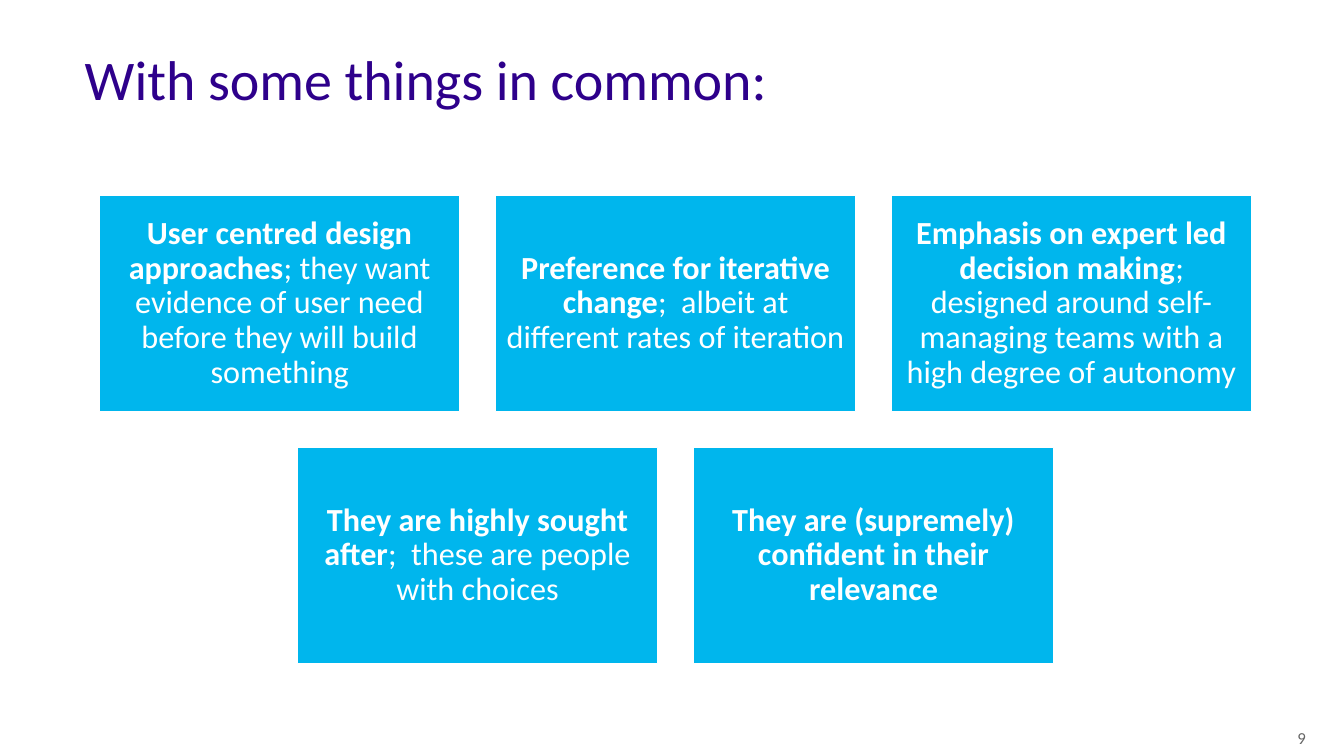
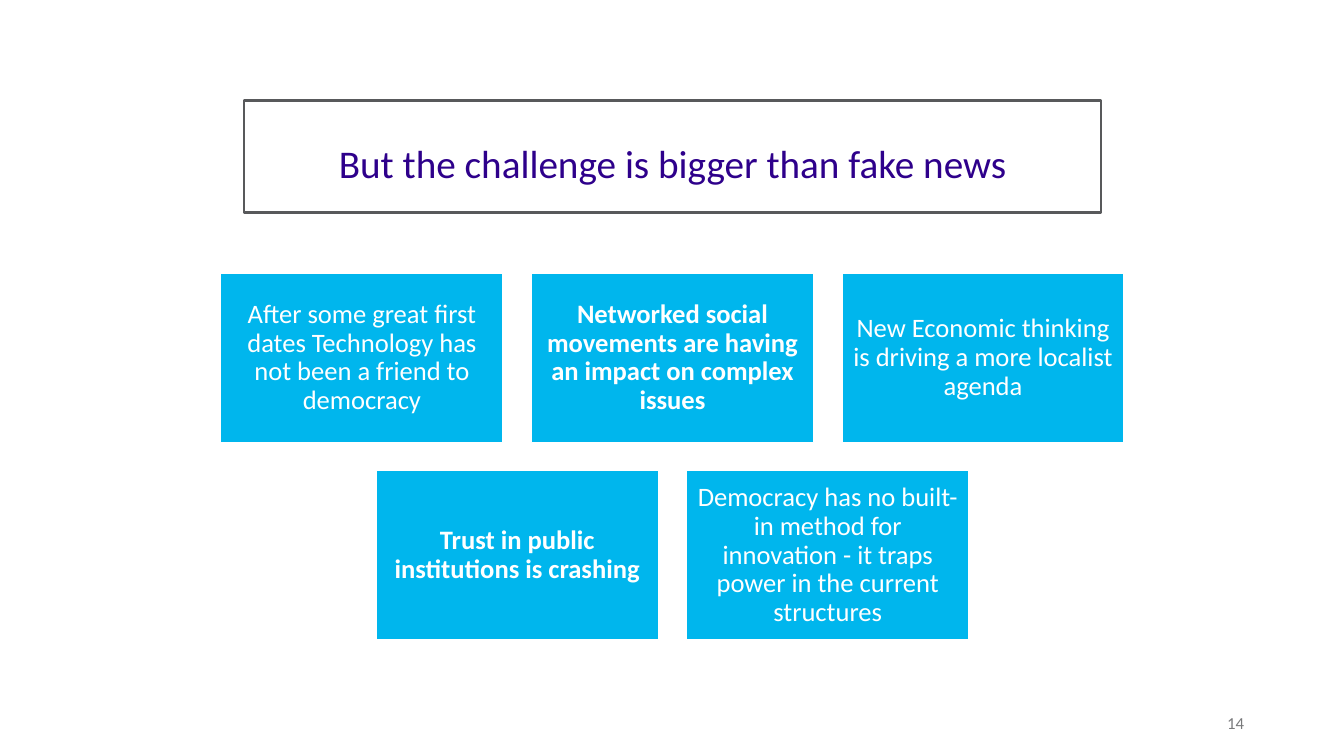
from lxml.etree import SubElement
from pptx import Presentation
from pptx.dml.color import RGBColor
from pptx.enum.shapes import MSO_SHAPE
from pptx.enum.text import MSO_ANCHOR, MSO_AUTO_SIZE, PP_ALIGN
from pptx.oxml.ns import qn
from pptx.util import Inches, Pt

WIDE, HIGH = 13.33, 7.5
FONT = "Calibri"
HUES = {
    "title": "2E008B",
    "card": "00B6ED",
    "white": "FFFFFF",
    "slate": "58595B",
    "grey": "666666",
}
LEFT, MID, RIGHT = PP_ALIGN.LEFT, PP_ALIGN.CENTER, PP_ALIGN.RIGHT
TOP, CORE, BASE = MSO_ANCHOR.TOP, MSO_ANCHOR.MIDDLE, MSO_ANCHOR.BOTTOM

# Each card is a bold part followed by a plain part.
COMMON = [
    [("User centred design approaches",
      "; they want evidence of user need before they will build something"),
     ("Preference for iterative change",
      ";  albeit at different rates of iteration"),
     ("Emphasis on expert led decision making",
      "; designed around self-managing teams with a high degree of autonomy")],
    [("They are highly sought after", ";  these are people with choices"),
     ("They are (supremely) confident in their relevance", "")],
]
ISSUES = [
    [("", "After some great first dates Technology has not been a friend to "
          "democracy"),
     ("Networked social movements are having an impact on complex issues", ""),
     ("", "New Economic thinking is driving a more localist agenda")],
    [("Trust in public institutions is crashing", ""),
     ("", "Democracy has no built- in method for innovation - it traps power "
          "in the current structures")],
]


def hue(name):
    return RGBColor.from_string(HUES[name])


def box(at):
    return [Inches(n) for n in at]


def fade(shape, share):
    """Give the first colour in the shape an opacity in percent."""
    tint = next(shape.element.iter(qn("a:srgbClr")))
    SubElement(tint, qn("a:alpha")).set("val", str(share * 1000))


def put(shape, bold="", plain="", size=12, color="white", align=MID,
        anchor=CORE, pad=(0, 0, 0, 0), lead=1.0):
    """Write a bold part and a plain part; pad is left, top, right, bottom."""
    frame = shape.text_frame
    frame.word_wrap = True
    frame.auto_size = MSO_AUTO_SIZE.NONE
    frame.vertical_anchor = anchor
    (frame.margin_left, frame.margin_top,
     frame.margin_right, frame.margin_bottom) = box(pad)
    para = frame.paragraphs[0]
    para.alignment = align
    para.line_spacing = lead
    for text, heavy in ((bold, True), (plain, False)):
        if text:
            run = para.add_run()
            run.text = text
            font = run.font
            font.name, font.size, font.bold = FONT, Pt(size), heavy
            font.color.rgb = hue(color)


def head(slide, text, at, **form):
    shape = slide.shapes.title
    shape.left, shape.top, shape.width, shape.height = box(at)
    put(shape, plain=text, color="title", anchor=TOP, lead=0.9, **form)
    return shape


def page(slide, text, at, **form):
    shape = slide.shapes.add_textbox(*box(at))
    put(shape, plain=text, anchor=BASE, pad=(0.08,) * 4, **form)
    return shape


def card(slide, at, parts, size, pad):
    shape = slide.shapes.add_shape(MSO_SHAPE.RECTANGLE, *box(at))
    shape.shadow.inherit = False
    shape.fill.solid()
    shape.fill.fore_color.rgb = hue("card")
    shape.line.color.rgb = hue("white")
    shape.line.width = Pt(1)
    put(shape, *parts, size=size, pad=(pad,) * 4, lead=0.9)


def cards(slide, rows, left, top, width, size, pad):
    """Lay out centred rows of 5:3 cards with gaps of a tenth of a card."""
    tall, gap = 0.6 * width, 0.1 * width
    most = max(len(row) for row in rows)
    for j, row in enumerate(rows):
        shift = (most - len(row)) / 2
        for i, parts in enumerate(row):
            x = left + (i + shift) * (width + gap)
            y = top + j * (tall + gap)
            card(slide, (x, y, width, tall), parts, size, pad)


def main():
    deck = Presentation()
    deck.slide_width, deck.slide_height = Inches(WIDE), Inches(HIGH)
    plan = deck.slide_layouts[5]

    slide = deck.slides.add_slide(plan)
    head(slide, "With some things in common:", (0.84, 0.52, 11.66, 0.61),
         size=40, align=LEFT)
    cards(slide, COMMON, 0.99, 1.94, 3.57, size=23, pad=0.1)
    page(slide, "9", (WIDE - 0.84, HIGH - 0.36, 0.84, 0.36), color="grey")

    slide = deck.slides.add_slide(plan)
    frame = head(slide, "But the challenge is bigger than fake news",
                 (2.42, 1, 8.5, 1.11), size=28, pad=(0, 0.43, 0, 0))
    frame.fill.solid()
    frame.fill.fore_color.rgb = hue("white")
    frame.line.color.rgb = hue("slate")
    frame.line.width = Pt(2)
    fade(frame, 10)
    cards(slide, ISSUES, 2.19, 2.71, 2.8, size=19, pad=0.08)
    fade(page(slide, "14", (9.42, 6.95, 3, 0.4), color="slate", align=RIGHT),
         80)

    deck.save("out.pptx")


if __name__ == "__main__":
    main()
